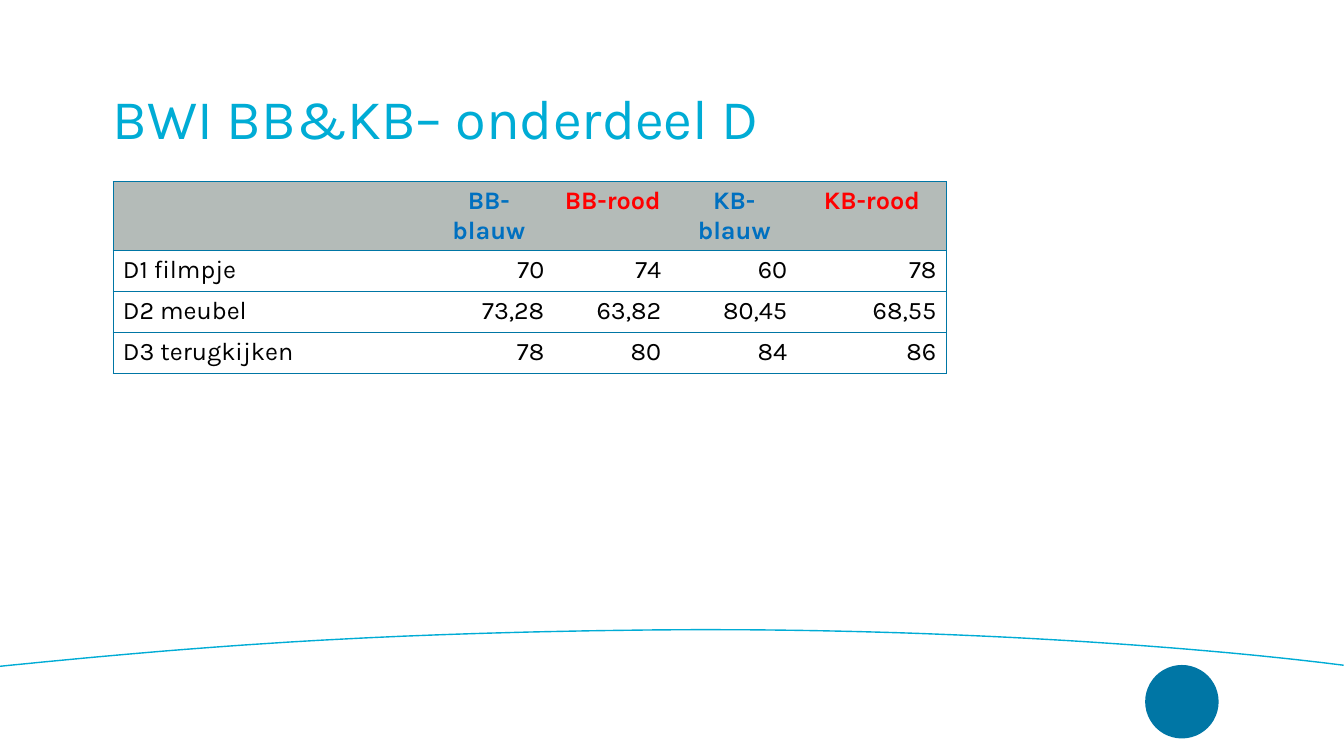
from lxml.etree import SubElement
from pptx import Presentation
from pptx.dml.color import RGBColor
from pptx.enum.shapes import MSO_SHAPE
from pptx.enum.text import MSO_ANCHOR, MSO_AUTO_SIZE, PP_ALIGN
from pptx.oxml.ns import qn
from pptx.util import Pt

FONT = "Karla"
CYAN, BORDER, HEADER_GREY = "00ACD5", "0076A5", "B4BBB8"
BLUE, RED, BLACK = "0070C0", "FF0000", "000000"
NO_STYLE = "{2D5ABB26-0587-4C30-8999-92F81FD0307C}"

HEADERS = [("", BLACK), ("BB-blauw", BLUE), ("BB-rood", RED),
           ("KB-blauw", BLUE), ("KB-rood", RED)]
SCORES = [
    ["D1 filmpje", "70", "74", "60", "78"],
    ["D2 meubel", "73,28", "63,82", "80,45", "68,55"],
    ["D3 terugkijken", "78", "80", "84", "86"],
]
COLUMN_WIDTHS = [221.76, 93.6, 83.52, 90, 106.56]
HEADER_HEIGHT, ROW_HEIGHT = 49.2, 29.2


def color(hex_code):
    return RGBColor.from_string(hex_code)


def format_runs(paragraph, size, hex_code, bold=False):
    for run in paragraph.runs:
        run.font.name = FONT
        run.font.size = Pt(size)
        run.font.bold = bold
        run.font.color.rgb = color(hex_code)


def add_title(slide, left, top, width, height, text):
    title = slide.shapes.title
    title.left, title.top = Pt(left), Pt(top)
    title.width, title.height = Pt(width), Pt(height)
    frame = title.text_frame
    frame.text = text
    frame.word_wrap = True
    frame.auto_size = MSO_AUTO_SIZE.NONE
    frame.vertical_anchor = MSO_ANCHOR.MIDDLE
    frame.margin_left = frame.margin_right = 0
    frame.margin_top = frame.margin_bottom = 0
    paragraph = frame.paragraphs[0]
    paragraph.alignment = PP_ALIGN.LEFT
    paragraph.line_spacing = 0.9
    format_runs(paragraph, 40, CYAN)


def set_borders(cell, sides):
    # Border lines come before the fill in the cell properties
    properties = cell._tc.get_or_add_tcPr()
    for index, side in enumerate(sides):
        line = SubElement(properties, qn(f"a:ln{side}"), w=str(Pt(0.5)))
        fill = SubElement(line, qn("a:solidFill"))
        SubElement(fill, qn("a:srgbClr"), val=BORDER)
        properties.insert(index, line)


def fill_cell(cell, text, alignment, hex_code, bold):
    cell.text = text
    paragraph = cell.text_frame.paragraphs[0]
    paragraph.alignment = alignment
    paragraph.font.size = Pt(18)
    format_runs(paragraph, 18, hex_code, bold)


def add_score_table(slide, left, top):
    row_count, column_count = len(SCORES) + 1, len(HEADERS)
    height = HEADER_HEIGHT + len(SCORES) * ROW_HEIGHT
    frame = slide.shapes.add_table(row_count, column_count, Pt(left), Pt(top),
                                   Pt(sum(COLUMN_WIDTHS)), Pt(height))
    table = frame.table
    table._tbl.tblPr.find(qn("a:tableStyleId")).text = NO_STYLE
    table.first_row = table.horz_banding = False
    for column, width in zip(table.columns, COLUMN_WIDTHS):
        column.width = Pt(width)
    for index, row in enumerate(table.rows):
        row.height = Pt(ROW_HEIGHT if index else HEADER_HEIGHT)

    # Header row
    for index, (text, hex_code) in enumerate(HEADERS):
        cell = table.cell(0, index)
        fill_cell(cell, text, PP_ALIGN.CENTER, hex_code, True)
        cell.fill.solid()
        cell.fill.fore_color.rgb = color(HEADER_GREY)

    # Score rows
    for row_index, values in enumerate(SCORES, start=1):
        for index, text in enumerate(values):
            cell = table.cell(row_index, index)
            alignment = PP_ALIGN.RIGHT if index else PP_ALIGN.LEFT
            fill_cell(cell, text, alignment, BLACK, False)
            cell.fill.background()

    # Horizontal rules everywhere, vertical ones on the outside only
    for row in table.rows:
        for index, cell in enumerate(row.cells):
            sides = ["L"] if index == 0 else []
            sides += ["R"] if index == column_count - 1 else []
            set_borders(cell, sides + ["T", "B"])


def curve_points(start, first, second, end, steps=40):
    for step in range(1, steps + 1):
        t = step / steps
        weights = [(1 - t) ** 3, 3 * t * (1 - t) ** 2, 3 * t ** 2 * (1 - t), t ** 3]
        yield tuple(
            Pt(sum(w * v for w, v in zip(weights, values)))
            for values in zip(start, first, second, end))


def add_footer_arc(slide, left, top, width):
    # Two smooth halves that meet near the middle
    start, middle, end = (left, top + 26), (left + 465, top), (left + width, top + 25.2)
    points = list(curve_points(
        start, (left + 137.5, top + 12.2), (left + 260, top + 2.2), middle))
    points += curve_points(
        middle, (left + 670.3, top - 2.2), (left + 859, top + 12.2), end)
    builder = slide.shapes.build_freeform(Pt(start[0]), Pt(start[1]))
    builder.add_line_segments(points, close=False)
    arc = builder.convert_to_shape()
    arc.shadow.inherit = False
    arc.fill.background()
    arc.line.color.rgb = color(CYAN)
    arc.line.width = Pt(1)


def add_emblem(slide, left, top, size):
    emblem = slide.shapes.add_shape(MSO_SHAPE.OVAL, Pt(left), Pt(top), Pt(size), Pt(size))
    emblem.shadow.inherit = False
    emblem.fill.solid()
    emblem.fill.fore_color.rgb = color(BORDER)
    emblem.line.fill.background()


def main():
    presentation = Presentation()
    presentation.slide_width, presentation.slide_height = Pt(960), Pt(540)
    slide = presentation.slides.add_slide(presentation.slide_layouts[5])
    add_emblem(slide, 818, 475, 52.5)
    add_footer_arc(slide, -0.7, 450, 960.5)
    add_title(slide, 80.6, 34.6, 799.2, 104.4, "BWI BB&KB– onderdeel D")
    add_score_table(slide, 80.6, 129.6)
    presentation.save("out.pptx")


if __name__ == "__main__":
    main()
